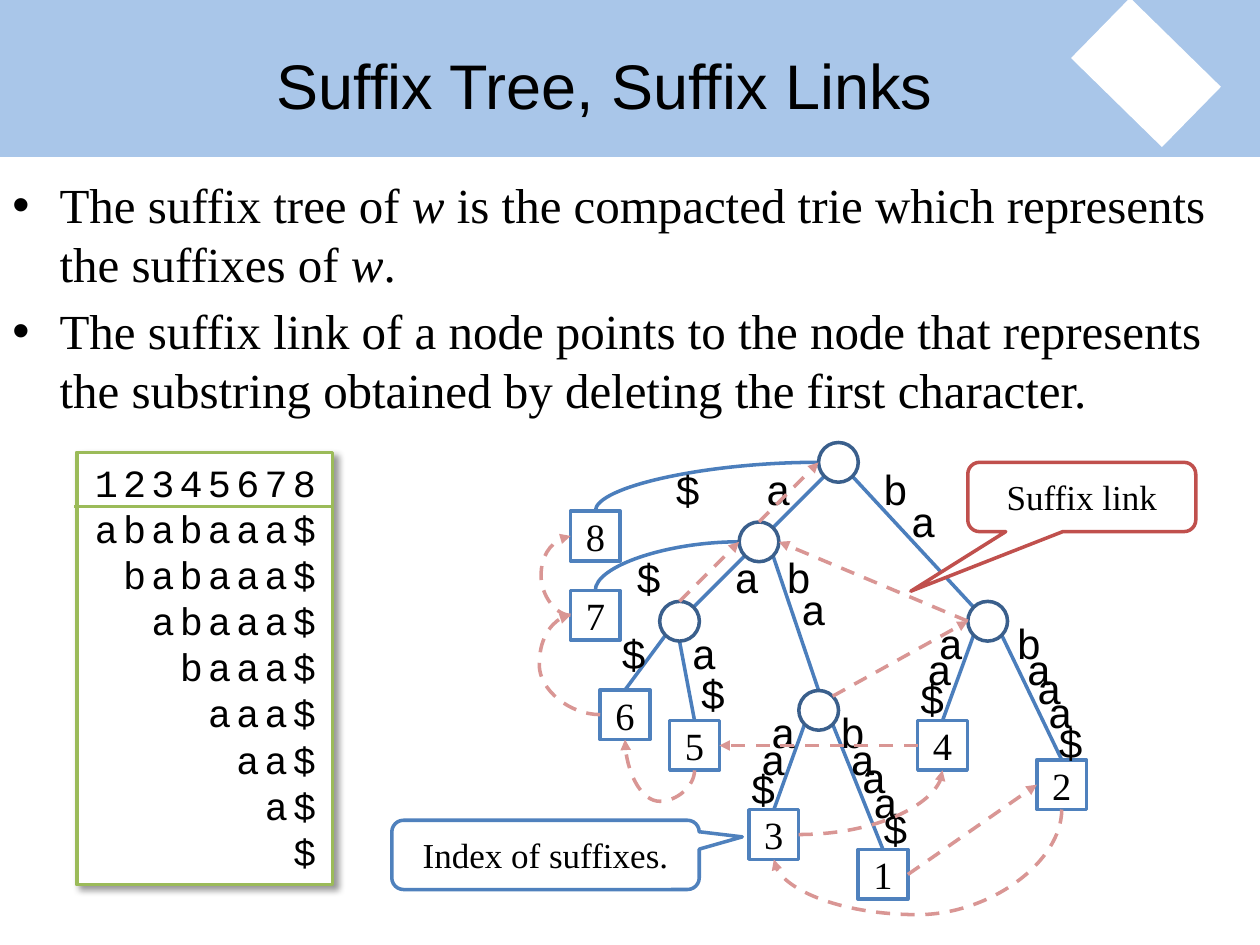
import pptx
import pptx.util
import pptx.dml.color
import pptx.enum.dml
import pptx.enum.shapes
import pptx.enum.text
import pptx.oxml.ns
from lxml import etree

Pt = pptx.util.Pt
RGB = pptx.dml.color.RGBColor
SHAPE = pptx.enum.shapes.MSO_SHAPE
CONNECTOR = pptx.enum.shapes.MSO_CONNECTOR
ALIGN = pptx.enum.text.PP_ALIGN
ANCHOR = pptx.enum.text.MSO_ANCHOR
qn = pptx.oxml.ns.qn

BLACK, WHITE = RGB(0, 0, 0), RGB(255, 255, 255)
BAND = RGB(0x55, 0x8E, 0xD5)
GREEN = RGB(0x9B, 0xBB, 0x59)
NODE_BLUE = RGB(0x3A, 0x5F, 0x8C)
EDGE_BLUE = RGB(0x4B, 0x7E, 0xBC)
LEAF_BLUE = RGB(0x4F, 0x81, 0xBD)
LINK_PINK = RGB(0xD9, 0x96, 0x94)
RED = RGB(0xC0, 0x50, 0x4D)

# Content
TITLE = "Suffix Tree, Suffix Links"
# Every second piece is italic
BULLETS = [
    ("The suffix tree of ", "w",
     " is the compacted trie which represents the suffixes of ", "w", "."),
    ("The suffix link of a node points to the node that represents "
     "the substring obtained by deleting the first character.",),
]
POSITIONS, WORD = "12345678", "ababaaa$"

# Centres of inner nodes and of numbered leaves
INNER = {"root": (479.1, 264.2), "a": (433.7, 309.6), "aa": (388.3, 355),
         "ba": (564.4, 355), "aba": (467.8, 405.9)}
LEAVES = {"8": (340.2, 306.3), "7": (340.2, 351.6), "6": (357.2, 408.4),
          "5": (396.9, 426), "4": (538.6, 426), "2": (606.7, 448.4),
          "3": (442.2, 476.9), "1": (504.6, 499.7)}
INNER_SIZE, LEAF_SIZE = 22.7, 28.4

# From node, side, to node, side
EDGES = [("root", "sw", "a", "ne"), ("root", "se", "ba", "nw"),
         ("a", "sw", "aa", "ne"), ("a", "se", "aba", "n"),
         ("aa", "sw", "6", "n"), ("aa", "s", "5", "n"),
         ("aba", "sw", "3", "n"), ("aba", "se", "1", "n"),
         ("ba", "sw", "4", "n"), ("ba", "se", "2", "n")]
BENT_EDGES = [("root", "w", "8", "n"), ("a", "w", "7", "n")]
LINKS = [("a", "n", "root", "w"), ("aa", "n", "a", "w"), ("ba", "w", "a", "e"),
         ("aba", "ne", "ba", "w"), ("1", "e", "2", "w"), ("4", "w", "5", "e")]
BENT_LINKS = [("3", "e", "4", "s")]
# The last number is the x or y that the loop reaches
LOOP_LINKS = [("2", "s", "3", "s", 522.7), ("5", "s", "6", "s", 457.9),
              ("6", "w", "7", "w", 308.2), ("7", "w", "8", "w", 308.2)]

# Letters along each edge: text, left and top of each letter
EDGE_LABELS = [
    ("$", [(378.7, 261.4)]), ("a", [(430.6, 261.4)]),
    ("ba", [(497.5, 261.4), (513.4, 279.4)]),
    ("$", [(356.4, 311.8)]), ("a", [(412.6, 311.8)]),
    ("ba", [(442.1, 311.8), (450.7, 329.8)]),
    ("$", [(347.8, 355)]), ("a$", [(388.1, 355), (393.1, 378)]),
    ("aa$", [(433.4, 400.3), (427.7, 415.4), (421.9, 432)]),
    ("baaa$", [(473, 400.3), (478.8, 415.4), (485.3, 426.2),
               (491.8, 439.9), (497.5, 455)]),
    ("aa$", [(529.2, 349.2), (522.7, 364.3), (518.4, 380.9)]),
    ("baaa$", [(573.8, 349.2), (579.6, 364.3), (585.4, 375.1),
               (591.8, 388.8), (597.6, 406.1)]),
]
CALLOUTS = [
    ("Index of suffixes.", (223.9, 468.7, 175.7, 39.6), LEAF_BLUE, (0.64, -0.26, 0.17)),
    ("Suffix link", (553, 264.2, 130.3, 39.6), RED, (-0.75, 1.36, 0.17)),
]

TITLE_FONT = {"name": "Arial", "size": Pt(36)}
BODY_FONT = {"name": "Times New Roman", "size": Pt(28)}
LEAF_FONT = {"name": "Times New Roman", "size": Pt(22)}
CALLOUT_FONT = {"name": "Times New Roman", "size": Pt(20)}
LABEL_FONT = {"name": "Courier New", "size": Pt(24)}
WORD_FONT = {"name": "Courier New", "size": Pt(22)}

deck = pptx.Presentation()
deck.slide_width, deck.slide_height = Pt(720), Pt(540)
slide = deck.slides.add_slide(deck.slide_layouts[6])


def write(paragraph, text, font, **more):
    run = paragraph.add_run()
    run.text = text
    for key, value in {**font, **more}.items():
        setattr(run.font, key, value)
    run.font.color.rgb = BLACK
    return run


def add_text(box, wrap=True):
    frame = slide.shapes.add_textbox(*map(Pt, box)).text_frame
    frame.word_wrap = wrap
    return frame


def add_box(preset, box, line_color=None, text="", font=None):
    shape = slide.shapes.add_shape(preset, *map(Pt, box))
    shape.shadow.inherit = False
    shape.fill.solid()
    shape.fill.fore_color.rgb = WHITE
    if line_color is None:
        shape.line.fill.background()
    else:
        shape.line.color.rgb = line_color
        shape.line.width = Pt(2)
    if text:
        frame = shape.text_frame
        frame.vertical_anchor = ANCHOR.MIDDLE
        frame.paragraphs[0].alignment = ALIGN.CENTER
        write(frame.paragraphs[0], text, font)
    return shape


def add_line(start, end, color, width=2, arrow=False, kind=CONNECTOR.STRAIGHT):
    line = slide.shapes.add_connector(kind, *map(Pt, (*start, *end)))
    line.line.color.rgb = color
    line.line.width = Pt(width)
    properties = line._element.spPr
    if arrow:
        line.line.dash_style = pptx.enum.dml.MSO_LINE.DASH
        etree.SubElement(properties.find(qn("a:ln")), qn("a:tailEnd"), type="triangle")
    etree.SubElement(properties, qn("a:effectLst"))
    return line


def add_bend(start, end, color, arrow=False):
    """Quarter curve that leaves sideways and arrives upright."""
    curve = add_line(start, end, color, arrow=arrow, kind=CONNECTOR.CURVE)
    curve._element.spPr.find(qn("a:prstGeom")).set("prst", "curvedConnector2")


def add_loop(start, end, side, reach, color):
    """Curve that leaves and arrives on the same side, out to reach."""
    (x1, y1), (x2, y2) = start, end
    upright = side == "s"
    if upright:  # a quarter turn about the centre
        cx, cy, dx, dy = (x1 + x2) / 2, (y1 + y2) / 2, x2 - x1, y2 - y1
        bulge = (reach - y1) / dy
        start, end = (cx - dy / 2, cy + dx / 2), (cx + dy / 2, cy - dx / 2)
    else:
        x2 = x2 if x2 != x1 else x1 + 0.12  # the bulge is relative to the width
        bulge = (reach - x1) / (x2 - x1)
        end = (x2, y2)
    properties = add_line(start, end, color, arrow=True, kind=CONNECTOR.CURVE)._element.spPr
    if upright:
        properties.find(qn("a:xfrm")).set("rot", "5400000")
    etree.SubElement(properties.find(qn("a:prstGeom")).find(qn("a:avLst")), qn("a:gd"),
                     name="adj1", fmla=f"val {round(bulge * 100000)}")


def anchor(node, side):
    x, y = INNER.get(node) or LEAVES[node]
    radius = (INNER_SIZE if node in INNER else LEAF_SIZE) / 2
    reach = radius * (0.71 if len(side) == 2 else 1)
    return (x + reach * (("e" in side) - ("w" in side)),
            y + reach * (("s" in side) - ("n" in side)))


def ends(from_node, from_side, to_node, to_side):
    return anchor(from_node, from_side), anchor(to_node, to_side)


# Header band, diamond and title
band = add_line((0, 44.6), (720, 44.6), BAND, width=90)
band_color = band._element.spPr.find(qn("a:ln")).find(".//" + qn("a:srgbClr"))
etree.SubElement(band_color, qn("a:alpha"), val="50000")
add_box(SHAPE.RECTANGLE, (618.5, 17.3, 72.7, 48.2)).rotation = 44.4
title = add_text((16.6, 11.5, 658, 73.4))
title.vertical_anchor = ANCHOR.MIDDLE
title.paragraphs[0].alignment = ALIGN.CENTER
write(title.paragraphs[0], TITLE, TITLE_FONT)

# Bullets
body = add_text((0, 96.5, 720, 150))
for index, pieces in enumerate(BULLETS):
    bullet = body.add_paragraph() if index else body.paragraphs[0]
    bullet.line_spacing = Pt(33.5)
    bullet.space_before = Pt(5 if index else 0)
    layout = bullet._p.get_or_add_pPr()
    layout.set("marL", str(Pt(27)))
    layout.set("indent", str(-Pt(27)))
    etree.SubElement(layout, qn("a:buFont"), typeface="Arial")
    etree.SubElement(layout, qn("a:buChar"), char="•")
    for position, piece in enumerate(pieces):
        write(bullet, piece, BODY_FONT, italic=position % 2 == 1)

# List of suffixes
panel = add_box(SHAPE.RECTANGLE, (43.9, 258.5, 146.2, 247), GREEN)
shadow = etree.SubElement(panel._element.spPr.find(qn("a:effectLst")), qn("a:outerShdw"),
                          blurRad=str(Pt(4)), dist=str(Pt(3)), dir="2700000", algn="tl")
shade = etree.SubElement(shadow, qn("a:srgbClr"), val="000000")
etree.SubElement(shade, qn("a:alpha"), val="40000")
suffixes = panel.text_frame
suffixes.vertical_anchor = ANCHOR.TOP
suffixes.margin_left, suffixes.margin_right = Pt(5), Pt(9.4)
for index, row in enumerate([POSITIONS] + [WORD[i:] for i in range(len(WORD))]):
    suffix = suffixes.add_paragraph() if index else suffixes.paragraphs[0]
    suffix.alignment = ALIGN.RIGHT
    suffix.line_spacing = Pt(26.4)
    write(suffix, row, WORD_FONT)._r.get_or_add_rPr().set("spc", "300")
add_line((42.5, 289.4), (190.1, 289.4), GREEN)

# Tree
for edge in EDGES:
    add_line(*ends(*edge), EDGE_BLUE)
for edge in BENT_EDGES:
    add_bend(*ends(*edge), EDGE_BLUE)
for x, y in INNER.values():
    add_box(SHAPE.OVAL, (x - INNER_SIZE / 2, y - INNER_SIZE / 2, INNER_SIZE, INNER_SIZE), NODE_BLUE)
for number, (x, y) in LEAVES.items():
    leaf = add_box(SHAPE.RECTANGLE, (x - LEAF_SIZE / 2, y - LEAF_SIZE / 2, LEAF_SIZE, LEAF_SIZE),
                   LEAF_BLUE, number, LEAF_FONT)
    leaf.text_frame.word_wrap = False
for letters, places in EDGE_LABELS:
    for letter, place in zip(letters, places):
        write(add_text((*place, 28.8, 36), wrap=False).paragraphs[0], letter, LABEL_FONT)

# Suffix links
for link in LINKS:
    add_line(*ends(*link), LINK_PINK, arrow=True)
for link in BENT_LINKS:
    add_bend(*ends(*link), LINK_PINK, arrow=True)
for *link, reach in LOOP_LINKS:
    add_loop(*ends(*link), link[1], reach, LINK_PINK)

# Callouts
for text, box, color, pointer in CALLOUTS:
    callout = add_box(SHAPE.ROUNDED_RECTANGULAR_CALLOUT, box, color, text, CALLOUT_FONT)
    for index, value in enumerate(pointer):
        callout.adjustments[index] = value

deck.save("out.pptx")
